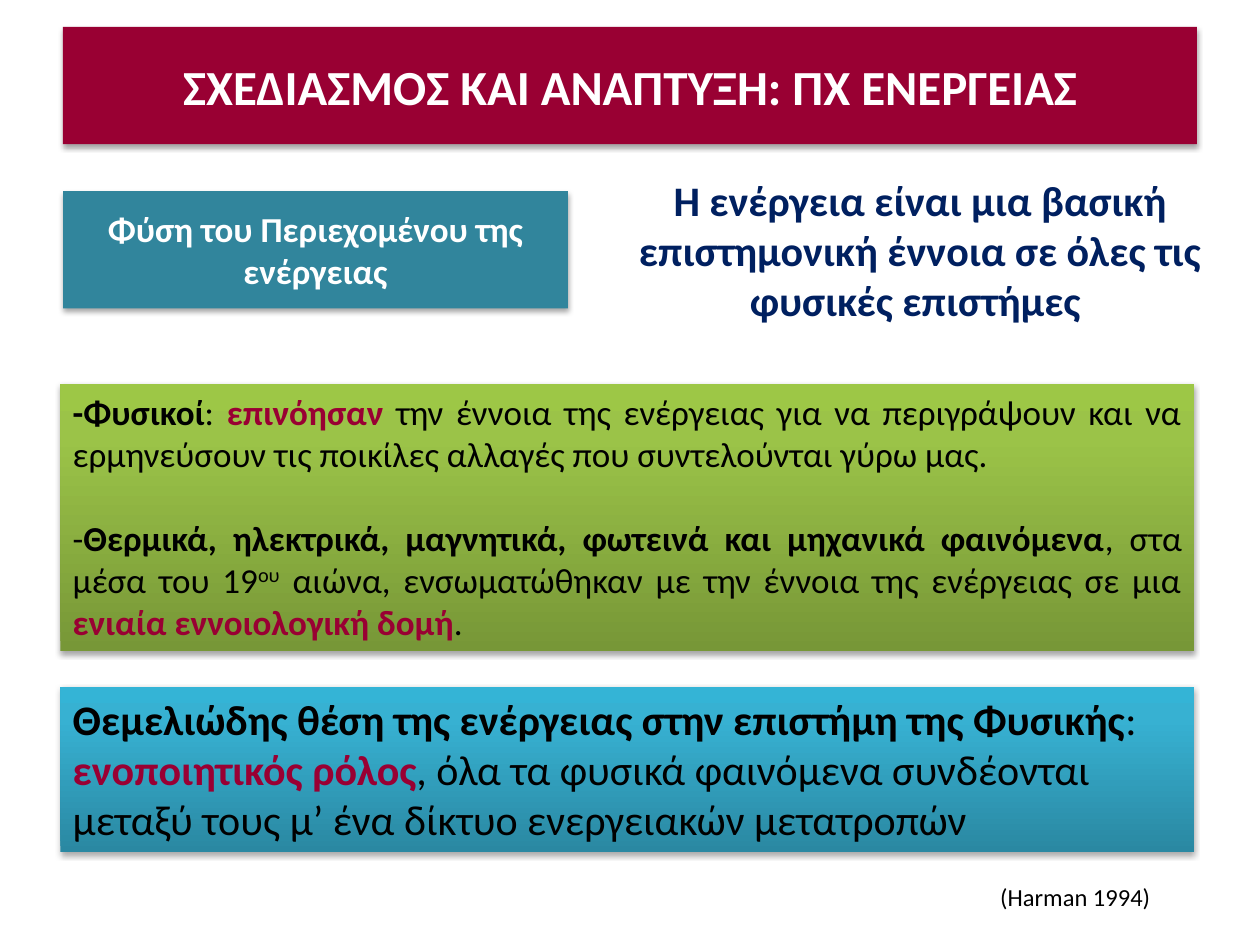
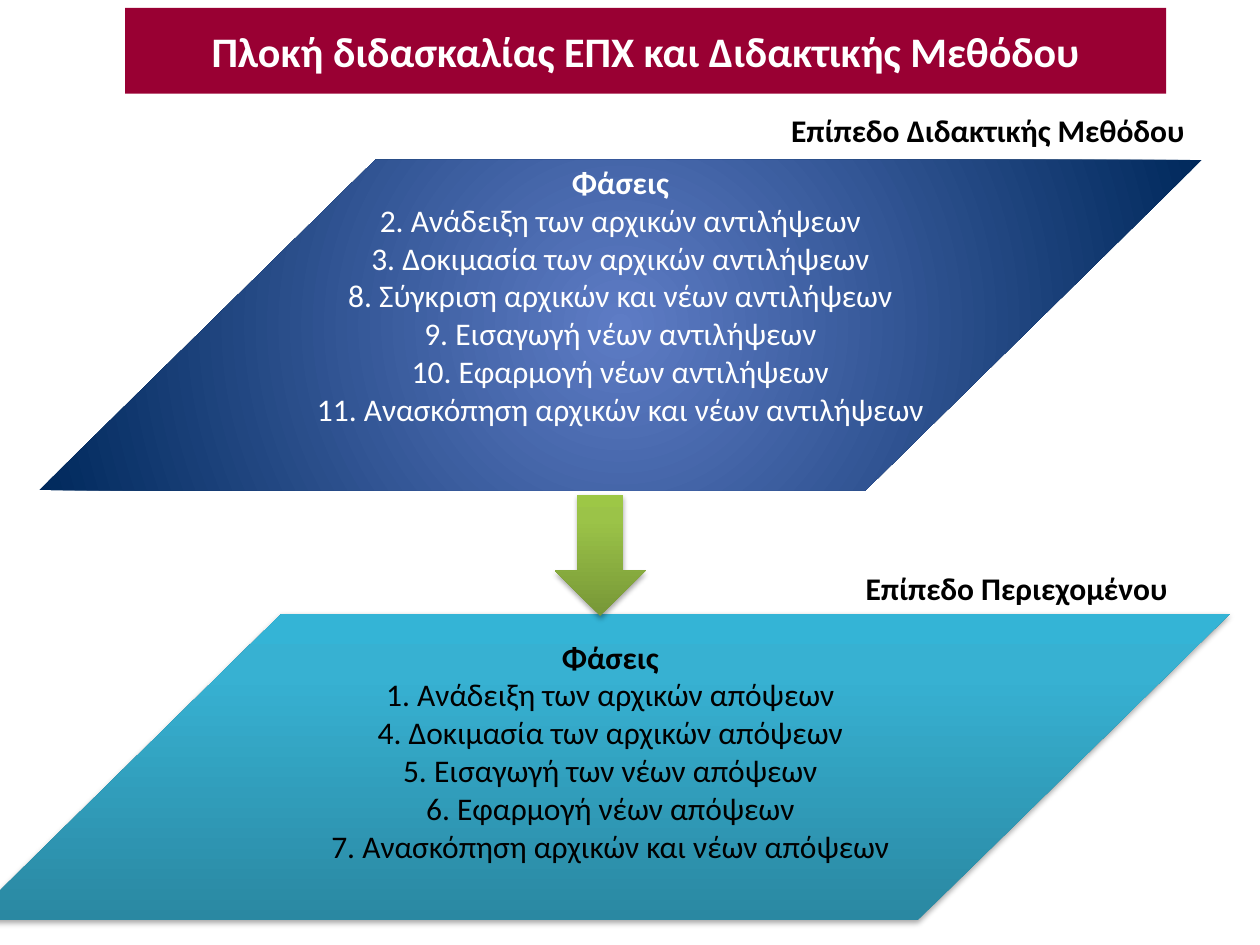
from lxml import etree
from pptx import Presentation
from pptx.dml.color import RGBColor
from pptx.enum.shapes import MSO_SHAPE as Shape
from pptx.enum.text import MSO_ANCHOR as Anchor, MSO_AUTO_SIZE as AutoSize, PP_ALIGN as Align
from pptx.oxml.ns import qn
from pptx.util import Pt

# Shared colours; gradients are lists of (position in percent, colour)
CRIMSON, TEAL, NAVY, WHITE, BLACK = "990033", "31859C", "002060", "FFFFFF", "000000"
GREEN_FADE = [(0, "779737"), (80, "9BC348"), (100, "9DC746")]
BLUE_FADE = [(0, "2A88A2"), (80, "37B1D2"), (100, "34B4D6")]
NAVY_GLOW = [(0, "5E7CC5"), (100, "00295C")]


def color(code):
    return RGBColor.from_string(code)


def add_node(parent, tag, **attributes):
    node = etree.SubElement(parent, qn(tag))
    for name, value in attributes.items():
        node.set(name, str(value))
    return node


def write(box, paras, size=18, ink=BLACK, bold=False, align=Align.LEFT, gap=0):
    """Fill a box with paragraphs; each is a string or a list of (text, changes) spans."""
    frame = box.text_frame
    for index, content in enumerate(paras):
        para = frame.paragraphs[0] if index == 0 else frame.add_paragraph()
        para.alignment = align
        if index and gap:
            para.space_before = Pt(gap)
        spans = [(content, {})] if isinstance(content, str) else content
        for text, changes in spans:
            span = para.add_run()
            span.text = text
            font = span.font
            font.name, font.size = "Calibri", Pt(size)
            font.bold = changes.get("bold", bold)
            font.color.rgb = color(changes.get("ink", ink))
            if changes.get("raised"):
                span._r.get_or_add_rPr().set("baseline", "30000")


class Painter:
    """Holds the deck, the current slide and the common style."""

    def __init__(self):
        self.deck = Presentation()
        self.deck.slide_width, self.deck.slide_height = Pt(720), Pt(540)
        self.page = None

    def new_page(self):
        self.page = self.deck.slides.add_slide(self.deck.slide_layouts[6])

    def shape(self, kind, left, top, width, height, fill, shadow=True, slant=None):
        box = self.page.shapes.add_shape(kind, Pt(left), Pt(top), Pt(width), Pt(height))
        box.line.fill.background()
        box.shadow.inherit = False
        if slant is not None:
            box.adjustments[0] = slant
        box.fill.solid()
        if isinstance(fill, str):
            box.fill.fore_color.rgb = color(fill)
        else:
            self.fade(box, fill)
        if shadow:
            self.cast_shadow(box)
        box.text_frame.word_wrap = True
        return box

    def fade(self, box, stops):
        """Swap the solid fill for a gradient: a round glow or a rising fade."""
        solid = box._element.spPr.find(qn("a:solidFill"))
        gradient = etree.Element(qn("a:gradFill"), rotWithShape="1")
        stop_list = add_node(gradient, "a:gsLst")
        for position, code in stops:
            stop = add_node(stop_list, "a:gs", pos=position * 1000)
            add_node(stop, "a:srgbClr", val=code)
        if stops is NAVY_GLOW:
            glow = add_node(gradient, "a:path", path="circle")
            add_node(glow, "a:fillToRect", l=50000, t=50000, r=50000, b=50000)
        else:
            add_node(gradient, "a:lin", ang=270 * 60000, scaled=0)
        solid.getparent().replace(solid, gradient)

    def cast_shadow(self, box):
        effects = box._element.spPr.find(qn("a:effectLst"))
        shadow = add_node(effects, "a:outerShdw", blurRad=Pt(3.1), dist=Pt(1.8),
                          dir=90 * 60000, rotWithShape=0)
        add_node(add_node(shadow, "a:srgbClr", val=BLACK), "a:alpha", val=35000)

    def band(self, left, top, width, height, text, size, fill=CRIMSON, shadow=True):
        box = self.shape(Shape.RECTANGLE, left, top, width, height, fill, shadow)
        box.text_frame.vertical_anchor = Anchor.MIDDLE
        write(box, [text], size=size, ink=WHITE, bold=True, align=Align.CENTER)

    def panel(self, top, height, fill, paras, **style):
        box = self.shape(Shape.RECTANGLE, 34.5, top, 648, height, fill)
        box.text_frame.vertical_anchor = Anchor.TOP
        write(box, paras, **style)

    def label(self, left, top, width, height, paras, wrap=True, **style):
        box = self.page.shapes.add_textbox(Pt(left), Pt(top), Pt(width), Pt(height))
        box.text_frame.word_wrap = wrap
        box.text_frame.auto_size = AutoSize.SHAPE_TO_FIT_TEXT
        write(box, paras, **style)


def phases(*steps):
    return [[("Φάσεις", {"bold": True})], *steps]


def energy_page(painter):
    strong, accent = {"bold": True}, {"bold": True, "ink": CRIMSON}
    painter.new_page()

    # Title and topic
    painter.band(36, 15.4, 648, 67, "ΣΧΕΔΙΑΣΜΟΣ ΚΑΙ ΑΝΑΠΤΥΞΗ: ΠΧ ΕΝΕΡΓΕΙΑΣ", 28)
    painter.band(36, 109.2, 288.6, 67, "Φύση του Περιεχομένου της ενέργειας", 20, fill=TEAL)
    painter.label(348.5, 96, 354.5, 94.5,
                  ["Η ενέργεια είναι μια βασική επιστημονική έννοια σε όλες τις φυσικές επιστήμες "],
                  size=24, ink=NAVY, bold=True, align=Align.CENTER)

    # History of the concept
    painter.panel(219.5, 152.6, GREEN_FADE, [
        [("-Φυσικοί", strong), (": ", {}), ("επινόησαν", accent),
         (" την έννοια της ενέργειας για να περιγράψουν και να ερμηνεύσουν "
          "τις ποικίλες αλλαγές που συντελούνται γύρω μας. ", {})],
        [("-", {}),
         ("Θερμικά, ηλεκτρικά, μαγνητικά, φωτεινά και μηχανικά φαινόμενα", strong),
         (", στα μέσα του 19", {}), ("ου", {"raised": True}),
         (" αιώνα, ενσωματώθηκαν με την έννοια της ενέργειας σε μια ", {}),
         ("ενιαία εννοιολογική δομή", accent), (". ", {})],
    ], size=20, align=Align.JUSTIFY, gap=24)

    # Role in physics and citation
    painter.panel(392.5, 94.4, BLUE_FADE, [
        [("Θεμελιώδης θέση της ενέργειας στην επιστήμη της Φυσικής", strong), (": ", {}),
         ("ενοποιητικός ρόλος", accent),
         (", όλα τα φυσικά φαινόμενα συνδέονται μεταξύ τους μ’ ένα δίκτυο "
          "ενεργειακών μετατροπών", {})],
    ], size=24)
    painter.label(546.5, 500.5, 136, 24.2, ["(Harman 1994)"], size=14, align=Align.CENTER)


def method_page(painter):
    slant = 1.018
    painter.new_page()

    # Teaching method level
    method = painter.shape(Shape.PARALLELOGRAM, 22.3, 91.4, 664.5, 188.8, NAVY_GLOW,
                           shadow=False, slant=slant)
    method.text_frame.vertical_anchor = Anchor.MIDDLE
    method.text_frame.margin_bottom = Pt(37.6)
    write(method, phases(
        "2. Ανάδειξη των αρχικών αντιλήψεων",
        "3. Δοκιμασία των αρχικών αντιλήψεων",
        "8. Σύγκριση αρχικών και νέων αντιλήψεων",
        "9. Εισαγωγή νέων αντιλήψεων",
        "10. Εφαρμογή νέων αντιλήψεων",
        "11. Ανασκόπηση αρχικών και νέων αντιλήψεων",
    ), ink=WHITE, align=Align.CENTER)

    # Content level and the arrow leading to it
    painter.shape(Shape.PARALLELOGRAM, -17.3, 350.8, 720, 175, BLUE_FADE, slant=slant)
    painter.shape(Shape.DOWN_ARROW, 317, 283, 52, 69, GREEN_FADE)

    # Title and level names
    painter.band(71.5, 4.5, 595, 49, "Πλοκή διδασκαλίας ΕΠΧ και Διδακτικής Μεθόδου", 24,
                 shadow=False)
    painter.label(445, 60, 241, 29, ["Επίπεδο Διδακτικής Μεθόδου"], wrap=False, bold=True)
    painter.label(487.5, 321.8, 188.6, 29, ["Επίπεδο Περιεχομένου"], wrap=False, bold=True)

    # Content phases
    painter.label(166.3, 360.8, 365, 138.2, phases(
        "1. Ανάδειξη των αρχικών απόψεων",
        "4. Δοκιμασία των αρχικών απόψεων",
        "5. Εισαγωγή των νέων απόψεων",
        "6. Εφαρμογή νέων απόψεων",
        "7. Ανασκόπηση αρχικών και νέων απόψεων",
    ), align=Align.CENTER)


def main():
    painter = Painter()
    energy_page(painter)
    method_page(painter)
    painter.deck.save("out.pptx")


if __name__ == "__main__":
    main()
